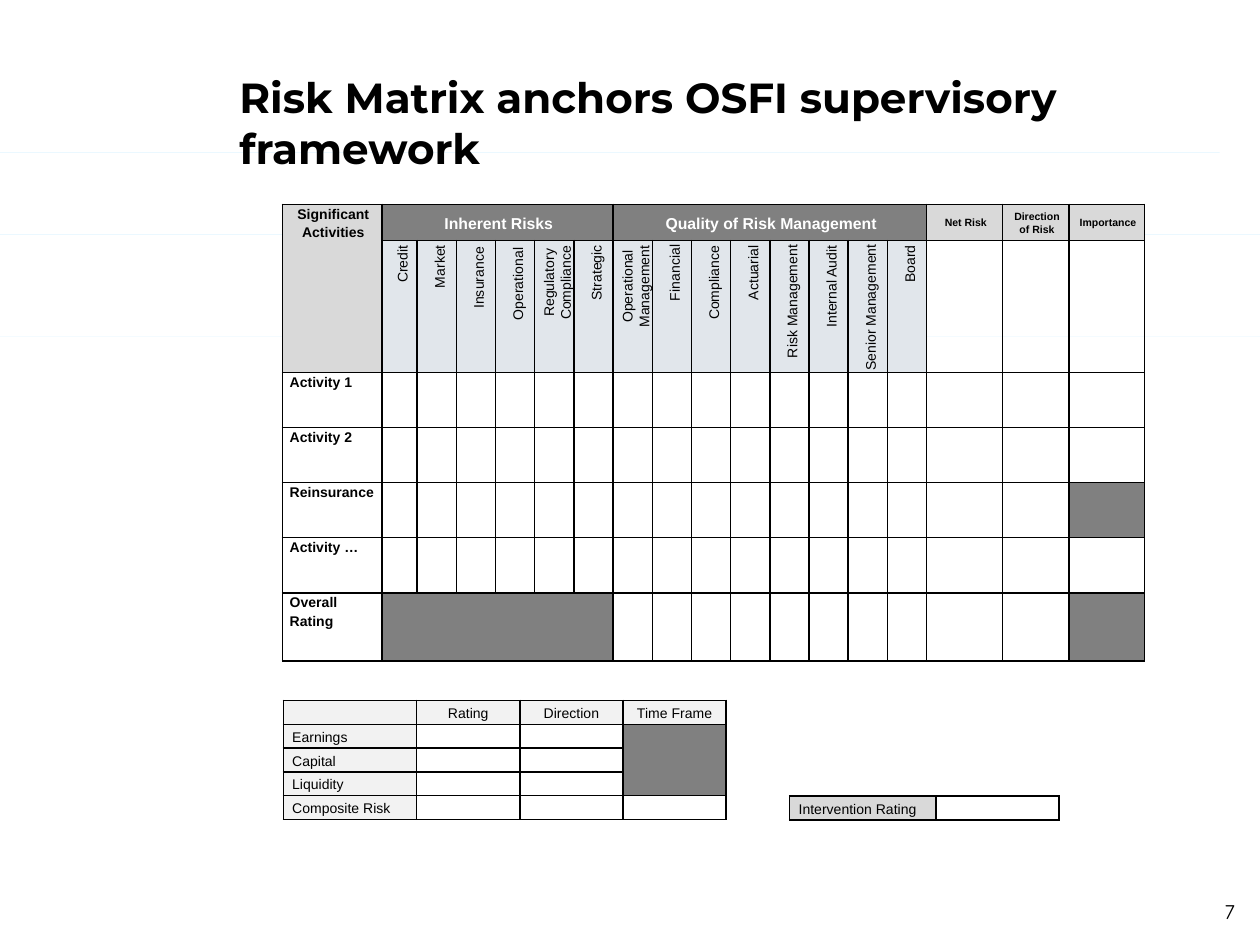
"""Build the risk matrix slide with its rating tables."""
from dataclasses import dataclass

from lxml import etree
from pptx import Presentation
from pptx.dml.color import RGBColor
from pptx.enum.shapes import MSO_SHAPE
from pptx.enum.text import MSO_ANCHOR, MSO_AUTO_SIZE, PP_ALIGN
from pptx.oxml.ns import qn
from pptx.util import Cm, Pt

RECTANGLE = MSO_SHAPE.RECTANGLE
TOP, MIDDLE, BOTTOM = MSO_ANCHOR.TOP, MSO_ANCHOR.MIDDLE, MSO_ANCHOR.BOTTOM
LEFT, CENTER, RIGHT = PP_ALIGN.LEFT, PP_ALIGN.CENTER, PP_ALIGN.RIGHT
FIXED, GROW = MSO_AUTO_SIZE.NONE, MSO_AUTO_SIZE.SHAPE_TO_FIT_TEXT


@dataclass(frozen=True)
class Theme:
    ink: str = "000000"
    white: str = "FFFFFF"
    dark: str = "808080"
    grey: str = "D9D9D9"
    pale: str = "F2F2F2"
    mist: str = "E1E6EB"
    rule: str = "66CCFF"
    rule_opacity: int = 20
    heading_font: str = "Montserrat"
    body_font: str = "Arial"
    number_font: str = "Comic Neue"
    title: float = 24
    number: float = 12
    group: float = 9
    body: float = 8
    small: float = 6


THEME = Theme()


@dataclass(frozen=True)
class Entry:
    text: str = ""
    fill: str = ""
    size: float = THEME.body
    bold: bool = False
    color: str = THEME.ink
    align: PP_ALIGN = LEFT
    anchor: MSO_ANCHOR = MIDDLE
    rows: int = 1
    cols: int = 1


@dataclass(frozen=True)
class Grid:
    left: float
    top: float
    widths: list[float]
    heights: list[float]
    entries: dict[tuple[int, int], Entry]
    inset_left: float = 0.18
    inset_right: float = 0.18


@dataclass(frozen=True)
class RiskLabel:
    text: str
    length: float


RISK_LABELS = [
    RiskLabel("Credit", 1.35), RiskLabel("Market", 1.45),
    RiskLabel("Insurance", 1.9), RiskLabel("Operational", 2.15),
    RiskLabel("Regulatory\nCompliance", 2.1), RiskLabel("Strategic", 1.7),
    RiskLabel("Operational\nManagement", 2.25), RiskLabel("Financial", 1.7),
    RiskLabel("Compliance", 2.1), RiskLabel("Actuarial", 1.7),
    RiskLabel("Risk Management", 2.85), RiskLabel("Internal Audit", 2.25),
    RiskLabel("Senior Management", 3.1), RiskLabel("Board", 1.35),
]
ACTIVITIES = ["Activity 1", "Activity 2", "Reinsurance", "Activity …", "Overall Rating"]


def format_text(frame, font: str, size: float, align: PP_ALIGN,
                bold: bool = False, color: str = THEME.ink) -> None:
    """Apply one style to all text in a frame."""
    for paragraph in frame.paragraphs:
        paragraph.alignment = align
        for run in paragraph.runs:
            run.font.name = font
            run.font.size = Pt(size)
            run.font.bold = bold
            run.font.color.rgb = RGBColor.from_string(color)


def add_borders(cell) -> None:
    """Give a cell a thin line on each side."""
    properties = cell._tc.get_or_add_tcPr()
    for side in ("a:lnL", "a:lnR", "a:lnT", "a:lnB"):
        line = etree.SubElement(properties, qn(side), w=str(Pt(1)))
        fill = etree.SubElement(line, qn("a:solidFill"))
        etree.SubElement(fill, qn("a:srgbClr"), val=THEME.ink)


def fill_cell(cell, entry: Entry, grid: Grid) -> None:
    """Write and format one table cell."""
    add_borders(cell)
    cell.margin_left, cell.margin_right = Cm(grid.inset_left), Cm(grid.inset_right)
    cell.margin_top = cell.margin_bottom = 0
    cell.vertical_anchor = entry.anchor
    if entry.fill:
        cell.fill.solid()
        cell.fill.fore_color.rgb = RGBColor.from_string(entry.fill)
    else:
        cell.fill.background()
    paragraph = cell.text_frame.paragraphs[0]
    if entry.text:
        paragraph.text = entry.text
        paragraph.line_spacing = 1.15
        format_text(cell.text_frame, THEME.body_font, entry.size, entry.align,
                    entry.bold, entry.color)
    else:
        etree.SubElement(paragraph._p, qn("a:endParaRPr"), sz=str(int(entry.size * 100)))


def draw_grid(slide, grid: Grid) -> None:
    """Draw a bordered table from its entries."""
    table = slide.shapes.add_table(
        len(grid.heights), len(grid.widths), Cm(grid.left), Cm(grid.top),
        Cm(sum(grid.widths)), Cm(sum(grid.heights))).table
    table.first_row = table.horz_banding = False
    for column, width in zip(table.columns, grid.widths):
        column.width = Cm(width)
    for row, height in zip(table.rows, grid.heights):
        row.height = Cm(height)
    for r in range(len(grid.heights)):
        for c in range(len(grid.widths)):
            fill_cell(table.cell(r, c), grid.entries.get((r, c), Entry()), grid)
    for (r, c), entry in grid.entries.items():
        if entry.rows * entry.cols > 1:
            table.cell(r, c).merge(table.cell(r + entry.rows - 1, c + entry.cols - 1))


def draw_rule(slide, left: float, top: float) -> None:
    """Draw a faint hairline across the slide, behind everything else."""
    rule = slide.shapes.add_shape(RECTANGLE, Cm(left), Cm(top), Cm(25.4), Cm(0.01))
    rule.shadow.inherit = False
    rule.fill.solid()
    rule.fill.fore_color.rgb = RGBColor.from_string(THEME.rule)
    color = rule._element.spPr.find(qn("a:solidFill")).find(qn("a:srgbClr"))
    etree.SubElement(color, qn("a:alpha"), val=str(THEME.rule_opacity * 1000))
    rule.line.fill.background()
    slide.shapes._spTree.insert(2, rule._element)


def draw_risk_label(slide, label: RiskLabel, center: float, top: float) -> None:
    """Draw an upward-reading label hung from the given top."""
    height = 0.94 if "\n" in label.text else 0.61
    box = slide.shapes.add_textbox(
        Cm(center - label.length / 2), Cm(top + (label.length - height) / 2),
        Cm(label.length), Cm(height))
    box.rotation = 270
    frame = box.text_frame
    frame.text = label.text
    frame.word_wrap = False
    frame.auto_size = GROW
    format_text(frame, THEME.body_font, THEME.body, CENTER)


def matrix_grid() -> Grid:
    """Describe the risk matrix."""
    def header(text: str, fill: str, size: float, **extra) -> Entry:
        return Entry(text, fill, size, bold=True, align=CENTER, **extra)

    entries = {
        (0, 0): header("Significant Activities", THEME.grey, THEME.body, anchor=TOP, rows=2),
        (0, 1): header("Inherent Risks", THEME.dark, THEME.group, color=THEME.white, cols=6),
        (0, 7): header("Quality of Risk Management", THEME.dark, THEME.group,
                       color=THEME.white, cols=8),
        (4, 17): Entry(fill=THEME.dark),
        (6, 1): Entry(fill=THEME.dark, cols=6),
        (6, 17): Entry(fill=THEME.dark),
    }
    for c, text in enumerate(("Net Risk", "Direction of Risk", "Importance"), 15):
        entries[0, c] = header(text, THEME.grey, THEME.small)
    for c in range(1, len(RISK_LABELS) + 1):
        entries[1, c] = Entry(fill=THEME.mist)
    for r, activity in enumerate(ACTIVITIES, 2):
        entries[r, 0] = Entry(activity, bold=True, anchor=TOP)
    return Grid(5.69, 4.12, [2.01, 0.71] + [0.79] * 13 + [1.53, 1.34, 1.52],
                [0.73, 2.66] + [1.11] * 4 + [1.37], entries, 0.15, 0.1)


def rating_grid() -> Grid:
    """Describe the financial rating table."""
    entries = {(0, 0): Entry(fill=THEME.pale), (1, 3): Entry(fill=THEME.dark, rows=3)}
    for c, text in enumerate(("Rating", "Direction", "Time Frame"), 1):
        entries[0, c] = Entry(text, THEME.pale, align=CENTER)
    for r, text in enumerate(("Earnings", "Capital", "Liquidity", "Composite Risk"), 1):
        entries[r, 0] = Entry(text, THEME.pale)
    return Grid(5.71, 14.12, [2.69] + [2.08] * 3, [0.48] * 5, entries)


def main() -> None:
    """Create and save the slide."""
    deck = Presentation()
    deck.slide_width, deck.slide_height = Cm(25.4), Cm(19.05)
    slide = deck.slides.add_slide(deck.slide_layouts[5])

    title = slide.shapes.title
    title.left, title.top, title.width, title.height = Cm(4.57), Cm(1.32), Cm(20.7), Cm(2.31)
    title.text_frame.text = "Risk Matrix anchors OSFI supervisory framework"
    title.text_frame.vertical_anchor = TOP
    title.text_frame.auto_size = FIXED
    format_text(title.text_frame, THEME.heading_font, THEME.title, LEFT, bold=True)

    for left, top in ((-0.81, 3.07), (0, 4.72), (0, 6.78)):
        draw_rule(slide, left, top)

    matrix = matrix_grid()
    draw_grid(slide, matrix)
    for column, label in enumerate(RISK_LABELS, 1):
        center = matrix.left + sum(matrix.widths[:column]) + matrix.widths[column] / 2
        draw_risk_label(slide, label, center + 0.06, 4.65)

    draw_grid(slide, rating_grid())
    draw_grid(slide, Grid(15.92, 16.05, [2.95, 2.48], [0.48],
                          {(0, 0): Entry("Intervention Rating", THEME.grey)}))

    page = slide.shapes.add_textbox(Cm(24.13), Cm(17.86), Cm(0.76), Cm(0.76)).text_frame
    page.text = "7"
    page.margin_left = page.margin_right = page.margin_top = page.margin_bottom = 0
    page.vertical_anchor = BOTTOM
    page.word_wrap = True
    format_text(page, THEME.number_font, THEME.number, RIGHT)

    deck.save("out.pptx")


if __name__ == "__main__":
    main()
